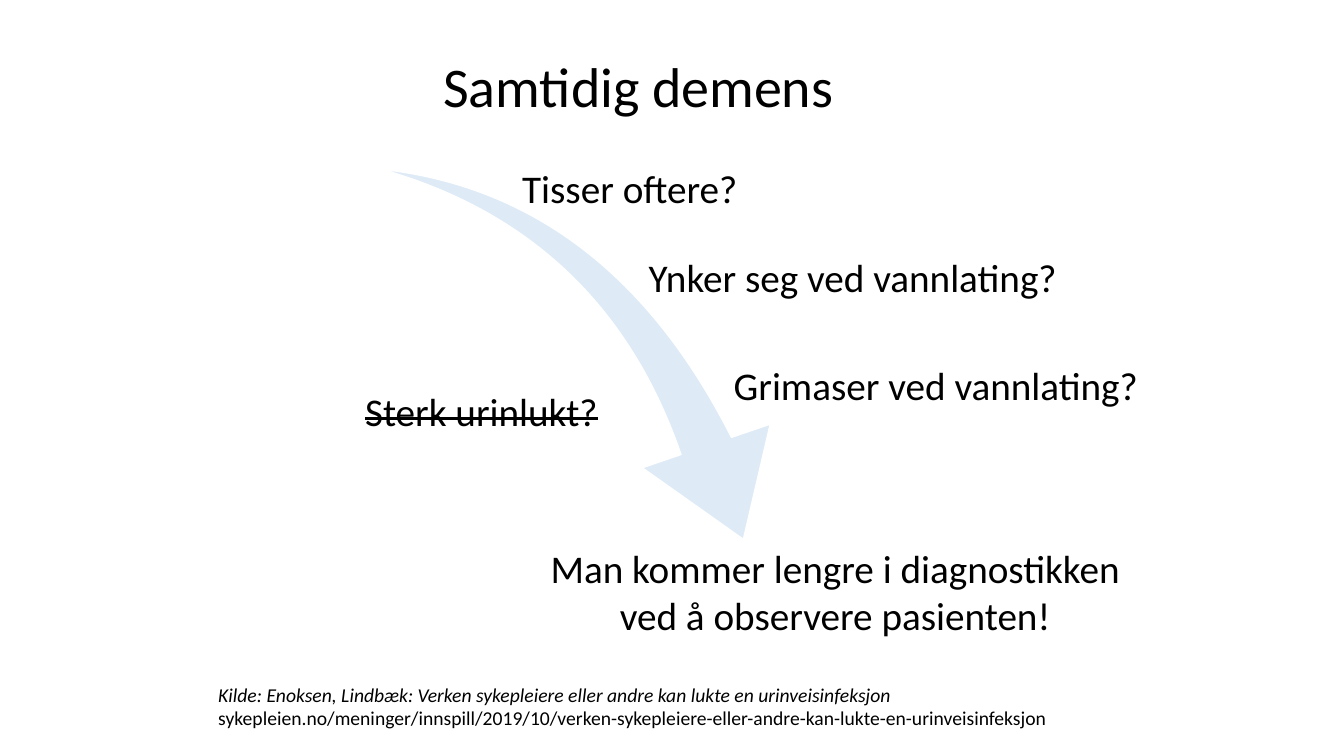
from pptx import Presentation
from pptx.dml.color import RGBColor
from pptx.enum.shapes import MSO_SHAPE
from pptx.enum.text import MSO_ANCHOR as Anchor, PP_ALIGN as Align
from pptx.util import Cm, Pt

BLACK = RGBColor(0x00, 0x00, 0x00)
WHITE = RGBColor(0xFF, 0xFF, 0xFF)
PALE_BLUE = RGBColor(0xDE, 0xEB, 0xF7)

presentation = Presentation()
presentation.slide_width = Cm(33.87)
presentation.slide_height = Cm(19.05)
slide = presentation.slides.add_slide(presentation.slide_layouts[6])


def add_outline(left, top, width, height):
    """Add an unfilled rectangular freeform that carries text; lengths in cm."""
    right, bottom = left + width, top + height
    builder = slide.shapes.build_freeform(Cm(left), Cm(top))
    builder.add_line_segments([(Cm(right), Cm(top)), (Cm(right), Cm(bottom)),
                               (Cm(left), Cm(bottom))], close=True)
    shape = builder.convert_to_shape()
    shape.shadow.inherit = False
    shape.fill.background()
    shape.line.fill.background()
    return shape


def add_text(text, left, top, width, height, size=28, align=Align.LEFT,
             anchor=Anchor.TOP, inset=(0.1, 0.1), line_spacing=0.9,
             italic=False, strike=False, outline=True):
    """Add one paragraph in a freeform or text box; inset is (sides, top and bottom)."""
    if outline:
        shape = add_outline(left, top, width, height)
    else:
        shape = slide.shapes.add_textbox(Cm(left), Cm(top), Cm(width), Cm(height))
    frame = shape.text_frame
    frame.word_wrap = True
    frame.vertical_anchor = anchor
    frame.margin_left = frame.margin_right = Cm(inset[0])
    frame.margin_top = frame.margin_bottom = Cm(inset[1])
    paragraph = frame.paragraphs[0]
    paragraph.alignment = align
    paragraph.line_spacing = line_spacing
    run = paragraph.add_run()
    run.text = text
    run.font.name = "Calibri"
    run.font.size = Pt(size)
    run.font.italic = italic
    run.font.color.rgb = BLACK
    if strike:
        run.font._element.set("strike", "sngStrike")
    return paragraph


arrow = slide.shapes.add_shape(MSO_SHAPE.SWOOSH_ARROW, Cm(9.26), Cm(4.69), Cm(11.07), Cm(8.2))
arrow.adjustments[0] = 0.163
arrow.adjustments[1] = 0.314
arrow.rotation = 77.6
arrow.shadow.inherit = False
arrow.fill.solid()
arrow.fill.fore_color.rgb = PALE_BLUE
arrow.line.color.rgb = WHITE
arrow.line.width = Pt(1)

add_text("Samtidig demens", 7.87, 1.24, 16.43, 1.91, size=40,
         align=Align.CENTER, anchor=Anchor.BOTTOM, inset=(0.13, 0.13))

add_text("Tisser oftere?", 13.06, 3.86, 7.39, 1.91, anchor=Anchor.MIDDLE)
add_text("Ynker seg ved vannlating?", 16.25, 6.1, 10.95, 1.91, anchor=Anchor.MIDDLE)
add_text("Grimaser ved vannlating?", 18.39, 9.14, 11.02, 1.24)
add_text("Sterk urinlukt?", 9.1, 9.8, 6.63, 1.24, strike=True)

add_text("Man kommer lengre i diagnostikken ved å observere pasienten!",
         13.31, 13.72, 15.47, 2.97, align=Align.CENTER, inset=(0, 0),
         line_spacing=1.0, outline=False)

citation = add_text(
    "Kilde: Enoksen, Lindbæk: Verken sykepleiere eller andre kan lukte en urinveisinfeksjon ",
    5.25, 17.07, 22, 1.45, size=14, inset=(0.25, 0.13), line_spacing=1.0,
    italic=True, outline=False)
address = citation.add_run()
address.text = ("sykepleien.no/meninger/innspill/2019/10/"
                "verken-sykepleiere-eller-andre-kan-lukte-en-urinveisinfeksjon")
address.font.name = "Calibri"
address.font.size = Pt(14)
address.font.color.rgb = BLACK

presentation.save("out.pptx")
